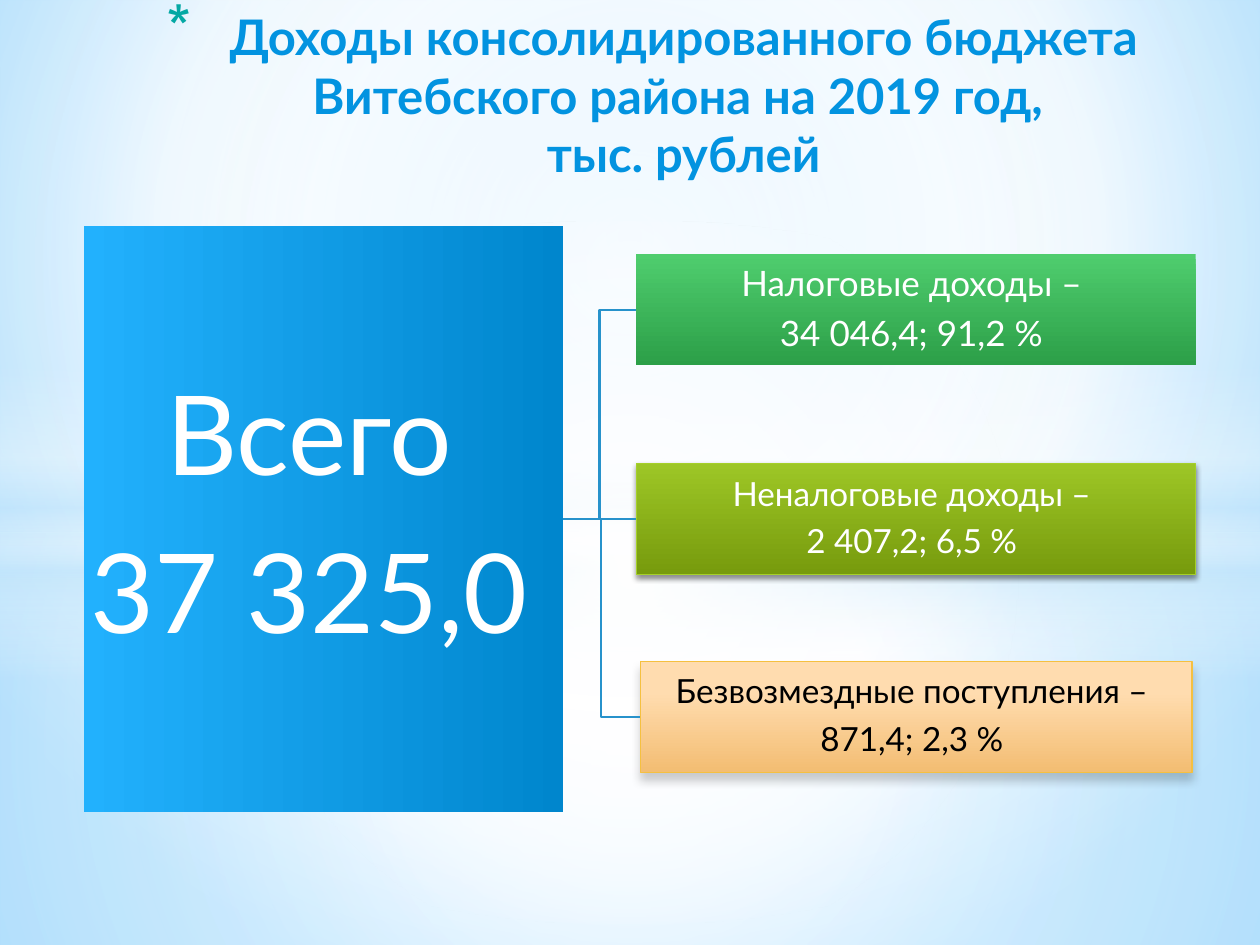
"""Build the slide on the district's consolidated budget revenue."""
from lxml.etree import SubElement
from pptx import Presentation
from pptx.dml.color import RGBColor
from pptx.enum.shapes import MSO_CONNECTOR, MSO_SHAPE
from pptx.enum.text import MSO_ANCHOR, MSO_AUTO_SIZE, PP_ALIGN
from pptx.oxml.ns import qn
from pptx.util import Pt

TITLE = "Доходы консолидированного бюджета Витебского района на 2019 год, \vтыс. рублей"
TOTAL = ["Всего ", "37 325,0 "]
PARTS = [
    {"text": ["Налоговые доходы – ", "34 046,4; 91,2 % "], "look": "tax", "mid": 177.1},
    {"text": ["Неналоговые доходы – ", "2 407,2; 6,5 % "], "look": "other", "mid": 296.6},
    {"text": ["Безвозмездные поступления – ", "871,4; 2,3 % "], "look": "grant", "mid": 409.7},
]
THEME = {
    "font": "Lato", "title": ("0293E0", 28), "star": "04A8A4", "link": "2792CB",
    "total": {"stops": [(0, "22B1FD"), (100, "0086CD")], "ink": "FFFFFF", "size": 63},
    "tax": {"stops": [(0, "4FCD6E"), (100, "2C9F48")], "ink": "FFFFFF", "size": 20},
    "other": {"stops": [(0, "9DC626"), (100, "779B0D")], "ink": "FFFFFF", "size": 19,
              "edge": "A5D028", "shade": (45, 3.1, 1.8)},
    "grant": {"stops": [(28, "FFDCAF"), (100, "F3BD72")], "ink": "000000", "size": 19,
              "edge": "F5C040", "shade": (20, 5, 4), "trim": 2.2},
    "back": [(0, "B0E0FF"), (60, "FFFFFF"), (100, "6BC5FF")],
}
CENTER = (50, 50, 50, 50)
GLOWS = [
    (MSO_SHAPE.RECTANGLE, 304.6, 235.4, CENTER,
     [(0, "FFFFFF", 91), (37, "FFFFFF", 76), (100, "C6E7FC", 79)]),
    (MSO_SHAPE.RECTANGLE, 0, 304.6, CENTER,
     [(0, "FFFFFF", 89), (48, "FFFFFF", 62), (100, "C6E7FC", 79)]),
    (MSO_SHAPE.RECTANGLE, 208.8, 180, None,
     [(0, "FFFFFF", 0), (29, "FFFFFF", 30), (45, "C6E7FC", 40),
      (55, "FFFFFF", 26), (65, "C6E7FC", 60), (100, "FFFFFF", 0)]),
    (MSO_SHAPE.OVAL, 126, 401.8, CENTER, [(0, "FFFFFF"), (54, "FFFFFF", 0)]),
]
WIDE, HIGH = 720, 540
BLOCK = (47.9, 129.2, 273.6, 334.8)
ROW_X, ROW_W, ROW_H = 363.6, 319.7, 63.4


def node(parent, tag, **attrs):
    return SubElement(parent, qn("a:" + tag), {k: str(v) for k, v in attrs.items()})


def tint(parent, color, alpha=100):
    item = node(parent, "srgbClr", val=color)
    if alpha < 100:
        node(item, "alpha", val=alpha * 1000)


def blend(props, stops, angle=90, focus=None):
    old = props.find(qn("a:solidFill"))
    grad = node(props, "gradFill", rotWithShape=1)
    props.replace(old, grad)
    marks = node(grad, "gsLst")
    for pos, *color in stops:
        tint(node(marks, "gs", pos=pos * 1000), *color)
    if focus:
        way = node(grad, "path", path="circle")
        node(way, "fillToRect", **{k: v * 1000 for k, v in zip("ltrb", focus)})
    else:
        node(grad, "lin", ang=angle * 60000, scaled=0)


def panel(slide, kind, box, stops, angle=90, focus=None):
    shape = slide.shapes.add_shape(kind, *map(Pt, box))
    shape.shadow.inherit = False
    shape.line.fill.background()
    shape.fill.solid()
    blend(shape.element.spPr, stops, angle, focus)
    return shape


def card(slide, box, lines, look, inset, angle=90):
    shape = panel(slide, MSO_SHAPE.RECTANGLE, box, look["stops"], angle)
    if "edge" in look:
        shape.line.color.rgb = RGBColor.from_string(look["edge"])
        shape.line.width = Pt(0.75)
    if "shade" in look:
        alpha, blur, dist = look["shade"]
        fx = shape.element.spPr.find(qn("a:effectLst"))
        tint(node(fx, "outerShdw", blurRad=Pt(blur), dist=Pt(dist), dir=5400000,
                  rotWithShape=0), "000000", alpha)
    frame = shape.text_frame
    frame.word_wrap = True
    frame.vertical_anchor = MSO_ANCHOR.MIDDLE
    frame.margin_left = frame.margin_right = Pt(inset)
    frame.margin_top = frame.margin_bottom = Pt(inset)
    frame.text = "\n".join(lines)
    for para in frame.paragraphs:
        para.alignment = PP_ALIGN.CENTER
        para.line_spacing = 0.9
        para.space_after = Pt(round(look["size"] * 0.35, 2))
        style(para, look["ink"], look["size"])
    return shape


def style(para, color, size):
    para.font.name = THEME["font"]
    para.font.size = Pt(size)
    para.font.color.rgb = RGBColor.from_string(color)


def link(slide, start, end, kind):
    line = slide.shapes.add_connector(kind, 0, 0, 0, 0)
    line.begin_connect(start, 3)
    line.end_connect(end, 1)
    line.line.color.rgb = RGBColor.from_string(THEME["link"])
    line.line.width = Pt(1.25)
    node(line.element.spPr, "effectLst")


def head(slide):
    title = slide.shapes.title
    slide.shapes.element.append(title.element)
    title.left, title.top, title.width, title.height = map(Pt, (36.7, 0, 657.4, 141.1))
    frame = title.text_frame
    frame.text = TITLE
    frame.word_wrap = True
    frame.auto_size = MSO_AUTO_SIZE.NONE
    frame.vertical_anchor = MSO_ANCHOR.TOP
    para = frame.paragraphs[0]
    para.alignment = PP_ALIGN.CENTER
    style(para, *THEME["title"])
    para.font.bold = True
    props = para.font._element.getparent()
    props.set("marL", str(Pt(50.4)))
    props.set("indent", str(Pt(-36)))
    star = [node(props, "buClr"), node(props, "buSzPct", val=128000),
            node(props, "buChar", char="*")]
    tint(star[0], THEME["star"])
    for spot, item in enumerate(star):
        props.insert(spot, item)


def main():
    deck = Presentation()
    deck.slide_width, deck.slide_height = Pt(WIDE), Pt(HIGH)
    slide = deck.slides.add_slide(deck.slide_layouts[5])
    slide.background.fill.solid()
    blend(slide.element.find(".//" + qn("p:bgPr")), THEME["back"], focus=(20, 10, 20, 60))
    for kind, top, high, focus, stops in GLOWS:
        panel(slide, kind, (0, top, WIDE, high), stops, focus=focus)
    head(slide)
    total = card(slide, BLOCK, TOTAL, THEME["total"], 2.9, angle=0)
    for part in PARTS:
        look = THEME[part["look"]]
        trim = look.get("trim", 0)
        box = (ROW_X + trim, part["mid"] - ROW_H / 2, ROW_W - 2 * trim, ROW_H)
        row = card(slide, box, part["text"], look, 0.7)
        level = part is PARTS[1]
        link(slide, total, row, MSO_CONNECTOR.STRAIGHT if level else MSO_CONNECTOR.ELBOW)
    deck.save("out.pptx")


if __name__ == "__main__":
    main()
